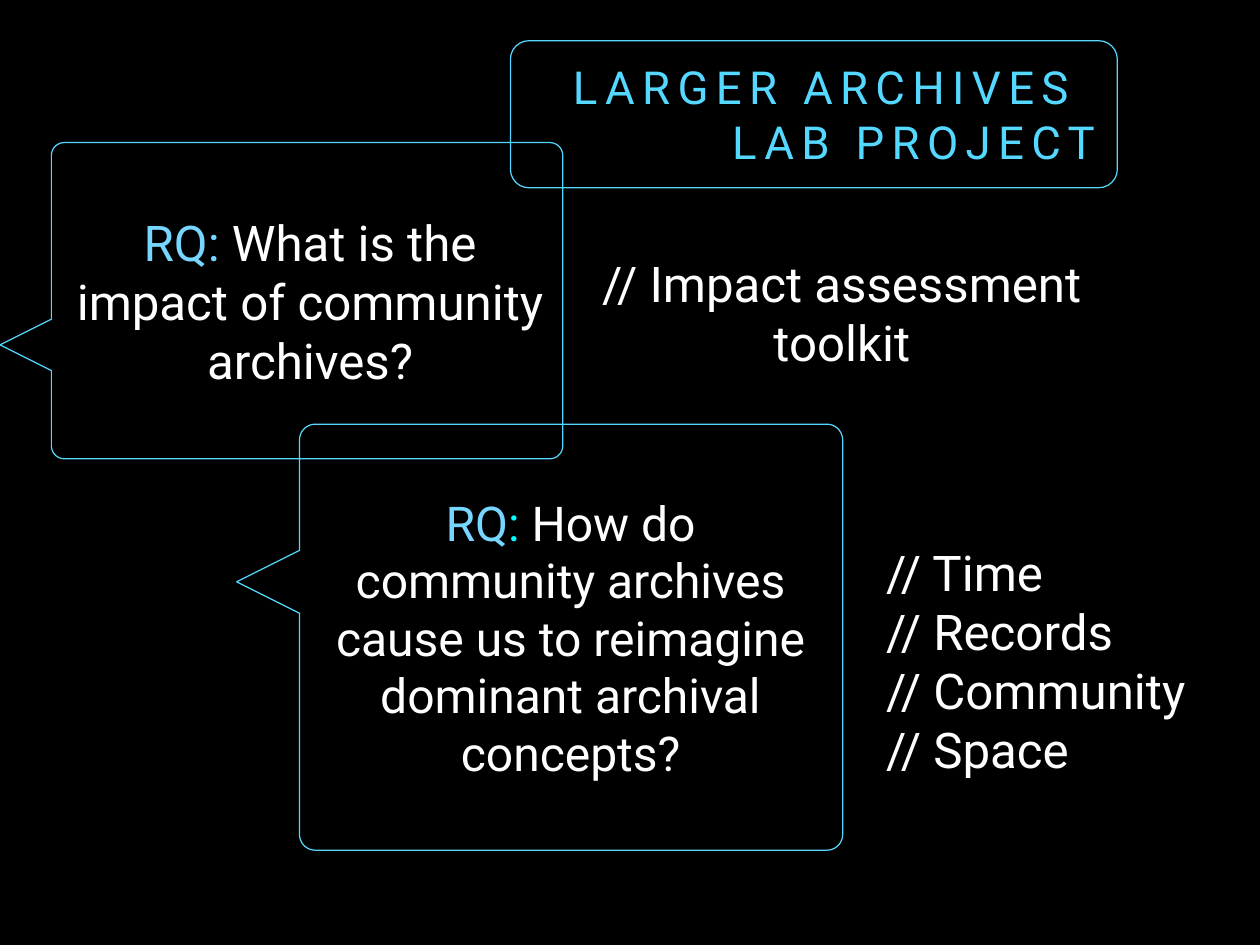
from dataclasses import dataclass
from math import cos, radians, sin

from pptx import Presentation
from pptx.dml.color import RGBColor
from pptx.enum.shapes import MSO_SHAPE
from pptx.enum.text import MSO_ANCHOR, MSO_AUTO_SIZE, PP_ALIGN
from pptx.util import Inches, Pt

WIDTH, HEIGHT = Inches(14.22), Inches(10.67)


@dataclass(frozen=True)
class Theme:
    font: str = "Roboto"
    back: RGBColor = RGBColor(0x00, 0x00, 0x00)
    text: RGBColor = RGBColor(0xFF, 0xFF, 0xFF)
    line: RGBColor = RGBColor(0x55, 0xD8, 0xFF)
    label: RGBColor = RGBColor(0x76, 0xD6, 0xFF)
    colon: RGBColor = RGBColor(0x00, 0xFD, 0xFF)
    title_size: int = 37
    body_size: int = 40
    dense_size: int = 39
    title_spacing: int = 6
    line_width: int = 1
    inset: float = 0.06


T = Theme()


def area(left, top, width, height):
    """Turn percentages of the slide's size into lengths."""
    return (int(WIDTH * left / 100), int(HEIGHT * top / 100),
            int(WIDTH * width / 100), int(HEIGHT * height / 100))


def set_frame(tf):
    tf.word_wrap = True
    tf.auto_size = MSO_AUTO_SIZE.NONE
    tf.vertical_anchor = MSO_ANCHOR.MIDDLE
    tf.margin_left = tf.margin_right = Inches(T.inset)
    tf.margin_top = tf.margin_bottom = Inches(T.inset)


def set_font(r, size, color):
    r.font.name = T.font
    r.font.size = Pt(size)
    r.font.color.rgb = color


def set_outline(sp):
    sp.shadow.inherit = False
    sp.fill.background()
    sp.line.color.rgb = T.line
    sp.line.width = Pt(T.line_width)


def add_title(s, text, box):
    sp = s.shapes.title
    sp.left, sp.top, sp.width, sp.height = area(*box)
    set_frame(sp.text_frame)
    sp.text_frame.text = text
    p = sp.text_frame.paragraphs[0]
    p.alignment = PP_ALIGN.RIGHT
    for r in p.runs:
        set_font(r, T.title_size, T.line)
        r.font._element.set("spc", str(T.title_spacing * 100))


def add_text(s, lines, box, size=T.body_size, align=PP_ALIGN.CENTER):
    """Each line is a list of (text, colour) runs."""
    tf = s.shapes.add_textbox(*area(*box)).text_frame
    set_frame(tf)
    for i, line in enumerate(lines):
        p = tf.add_paragraph() if i else tf.paragraphs[0]
        p.alignment = align
        for text, color in line:
            r = p.add_run()
            r.text = text
            set_font(r, size, color)


def add_callout(s, box, tail, tip):
    """Rounded box with a left tail; tail is a share of the slide's width,
    tip a share of the box's height."""
    x, y, w, h = area(*box)
    tail = WIDTH * tail / 100
    radius, tip_y = tail / 4, y + h * tip
    left, right = x + radius, x + w - radius
    top, bottom = y + radius, y + h - radius

    def corner(cx, cy, start):
        angles = [radians(start + step) for step in range(0, 91, 10)]
        return [(cx + radius * cos(a), cy + radius * sin(a)) for a in angles]

    points = (corner(left, top, 180) + corner(right, top, 270)
              + corner(right, bottom, 0) + corner(left, bottom, 90)
              + [(x, tip_y + tail / 2), (x - tail, tip_y), (x, tip_y - tail / 2)])
    points = [(round(px), round(py)) for px, py in points]
    builder = s.shapes.build_freeform(*points[0])
    builder.add_line_segments(points[1:], close=True)
    set_outline(builder.convert_to_shape())


def add_title_border(s, box):
    sp = s.shapes.add_shape(MSO_SHAPE.ROUNDED_RECTANGLE, *area(*box))
    sp.adjustments[0] = 0.126
    set_outline(sp)


def main():
    prs = Presentation()
    prs.slide_width, prs.slide_height = WIDTH, HEIGHT
    s = prs.slides.add_slide(prs.slide_layouts[5])
    s.background.fill.solid()
    s.background.fill.fore_color.rgb = T.back

    # Title
    add_title(s, "LARGER ARCHIVES \vLAB PROJECT", (40.3, 4.87, 47.05, 14.34))
    add_title_border(s, (40.51, 4.31, 48.17, 15.56))

    # First research question and its outcome
    add_callout(s, (4.08, 15.09, 40.58, 33.46), tail=4.08, tip=0.64)
    add_text(s, [[("RQ:", T.label),
                  (" What is the impact of community archives?", T.text)]],
             (5.06, 20.34, 39.1, 23.06))
    add_text(s, [[("// Impact assessment toolkit", T.text)]],
             (45.01, 28.96, 43.6, 8.25))

    # Second research question and its concepts
    add_callout(s, (23.77, 44.89, 43.11, 45.08), tail=4.99, tip=0.37)
    add_text(s, [[("RQ", T.label), (":", T.colon),
                  (" How do community archives cause us to reimagine "
                   "dominant archival concepts?", T.text)]],
             (25.74, 49.67, 39.1, 35.52), size=T.dense_size)
    concepts = ("Time", "Records", "Community", "Space")
    add_text(s, [[(f"// {name}", T.text)] for name in concepts],
             (69.9, 55.01, 25.95, 29.71), align=PP_ALIGN.LEFT)

    prs.save("out.pptx")


if __name__ == "__main__":
    main()
